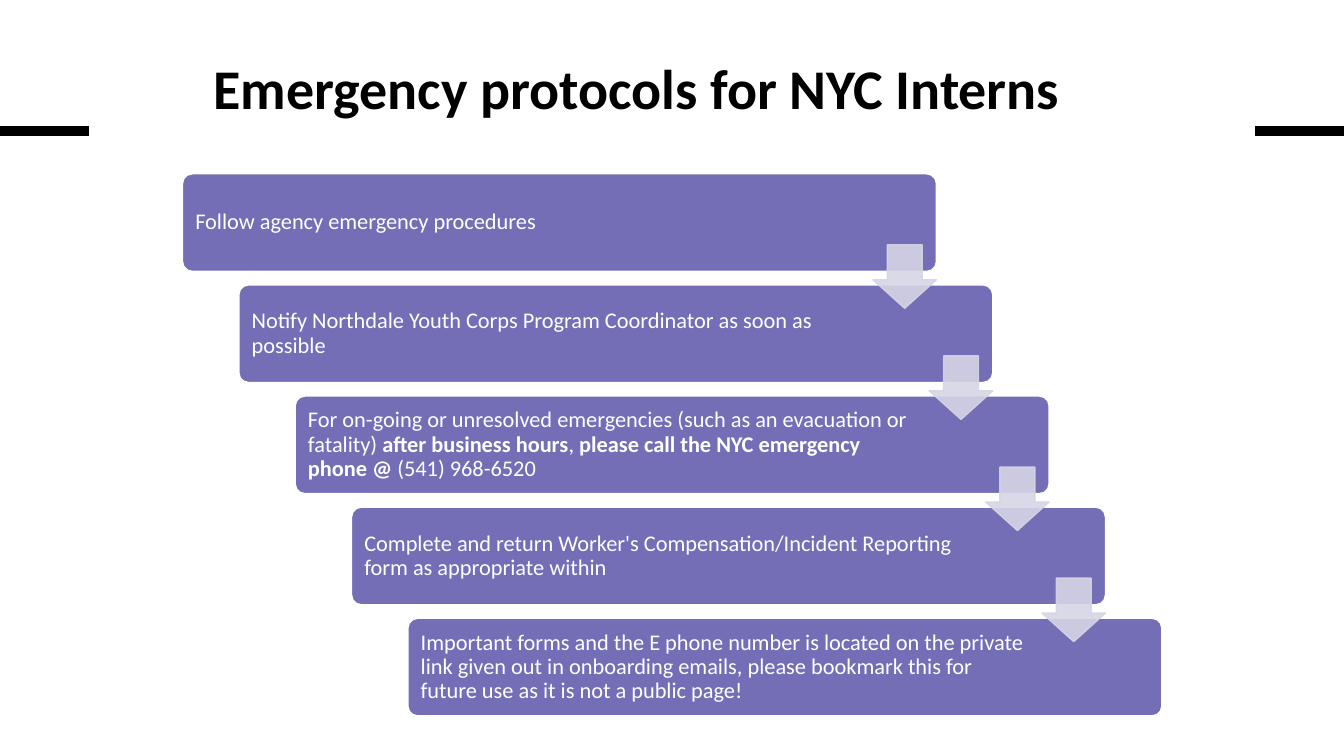
from dataclasses import dataclass

from lxml import etree
from pptx import Presentation
from pptx.dml.color import RGBColor
from pptx.enum.shapes import MSO_CONNECTOR, MSO_SHAPE
from pptx.enum.text import MSO_ANCHOR, MSO_AUTO_SIZE, PP_ALIGN
from pptx.oxml.ns import qn
from pptx.util import Cm, Pt

STRAIGHT = MSO_CONNECTOR.STRAIGHT
ROUNDED_BOX = MSO_SHAPE.ROUNDED_RECTANGLE
DOWN_ARROW = MSO_SHAPE.DOWN_ARROW
MIDDLE, TOP = MSO_ANCHOR.MIDDLE, MSO_ANCHOR.TOP
LEFT, CENTER = PP_ALIGN.LEFT, PP_ALIGN.CENTER
NO_AUTOFIT = MSO_AUTO_SIZE.NONE


@dataclass(frozen=True)
class Theme:
    font: str = "Calibri"
    title_size: float = 40
    step_size: float = 16
    black: RGBColor = RGBColor(0x00, 0x00, 0x00)
    white: RGBColor = RGBColor(0xFF, 0xFF, 0xFF)
    box: RGBColor = RGBColor(0x73, 0x6E, 0xB6)
    arrow: RGBColor = RGBColor(0xD5, 0xD5, 0xE5)
    arrow_opacity: int = 90


@dataclass(frozen=True)
class Phrase:
    text: str
    bold: bool = False


@dataclass(frozen=True)
class Step:
    phrases: tuple[Phrase, ...]


@dataclass(frozen=True)
class Rule:
    start: float
    end: float


THEME = Theme()
SLIDE_WIDTH, SLIDE_HEIGHT = 33.87, 19.05
RULE_LENGTH, RULE_TOP = 2.24, 3.3
STEP_SHIFT, STEP_DROP = 1.42, 2.8
BOX_LEFT, BOX_TOP, BOX_WIDTH, BOX_HEIGHT = 4.6, 4.38, 19.0, 2.46
ARROW_LEFT, ARROW_TOP, ARROW_SIZE = 22.0, 6.17, 1.6

RULES = (Rule(0, RULE_LENGTH), Rule(SLIDE_WIDTH - RULE_LENGTH, SLIDE_WIDTH))
STEPS = (
    Step((Phrase("Follow agency emergency procedures"),)),
    Step((Phrase("Notify Northdale Youth Corps Program Coordinator as soon as possible"),)),
    Step((
        Phrase("For on-going or unresolved emergencies (such as an evacuation or fatality) "),
        Phrase("after business hours", True),
        Phrase(", "),
        Phrase("please call the NYC emergency phone @ ", True),
        Phrase("(541) 968-6520"),
    )),
    Step((Phrase("Complete and return Worker's Compensation/Incident Reporting "
                 "form as appropriate within"),)),
    Step((Phrase("Important forms and the E phone number is located on the private link "
                 "given out in onboarding emails, please bookmark this for future use "
                 "as it is not a public page!"),)),
)


def format_run(run, size: float, color: RGBColor, bold: bool) -> None:
    run.font.name = THEME.font
    run.font.size = Pt(size)
    run.font.color.rgb = color
    run.font.bold = bold


def draw_title(slide, text: str) -> None:
    title = slide.shapes.title
    title.left, title.top = Cm(1.17), Cm(1.47)
    title.width, title.height = Cm(29.74), Cm(3.35)
    frame = title.text_frame
    frame.text = text
    frame.word_wrap = True
    frame.auto_size = NO_AUTOFIT
    frame.vertical_anchor = TOP
    paragraph = frame.paragraphs[0]
    paragraph.alignment = CENTER
    paragraph.line_spacing = 0.85
    format_run(paragraph.runs[0], THEME.title_size, THEME.black, True)


def draw_rule(slide, rule: Rule) -> None:
    connector = slide.shapes.add_connector(
        STRAIGHT, Cm(rule.start), Cm(RULE_TOP), Cm(rule.end), Cm(RULE_TOP))
    connector.line.color.rgb = THEME.black
    connector.line.width = Pt(6.75)
    etree.SubElement(connector._element.spPr, qn("a:effectLst"))


def add_filled_shape(slide, kind, left: float, top: float, width: float, height: float,
                     fill: RGBColor, outline: RGBColor):
    shape = slide.shapes.add_shape(kind, Cm(left), Cm(top), Cm(width), Cm(height))
    shape.shadow.inherit = False
    shape.fill.solid()
    shape.fill.fore_color.rgb = fill
    shape.line.color.rgb = outline
    shape.line.width = Pt(1)
    return shape


def draw_step(slide, index: int, step: Step) -> None:
    box = add_filled_shape(
        slide, ROUNDED_BOX, BOX_LEFT + index * STEP_SHIFT, BOX_TOP + index * STEP_DROP,
        BOX_WIDTH, BOX_HEIGHT, THEME.box, THEME.white)
    box.adjustments[0] = 0.1
    frame = box.text_frame
    frame.word_wrap = True
    frame.vertical_anchor = MIDDLE
    frame.margin_left, frame.margin_right = Cm(0.25), Cm(3.27)
    frame.margin_top = frame.margin_bottom = Cm(0.2)
    paragraph = frame.paragraphs[0]
    paragraph.alignment = LEFT
    paragraph.line_spacing = 0.9
    for phrase in step.phrases:
        run = paragraph.add_run()
        run.text = phrase.text
        format_run(run, THEME.step_size, THEME.white, phrase.bold)


def draw_arrow(slide, index: int) -> None:
    arrow = add_filled_shape(
        slide, DOWN_ARROW, ARROW_LEFT + index * STEP_SHIFT, ARROW_TOP + index * STEP_DROP,
        ARROW_SIZE, ARROW_SIZE, THEME.arrow, THEME.arrow)
    arrow.adjustments[0] = 0.55
    arrow.adjustments[1] = 0.45
    for color in arrow._element.spPr.iter(qn("a:srgbClr")):
        etree.SubElement(color, qn("a:alpha"), val=str(THEME.arrow_opacity * 1000))


def main() -> None:
    presentation = Presentation()
    presentation.slide_width = Cm(SLIDE_WIDTH)
    presentation.slide_height = Cm(SLIDE_HEIGHT)
    slide = presentation.slides.add_slide(presentation.slide_layouts.get_by_name("Title Only"))
    draw_title(slide, "Emergency protocols for NYC Interns")
    for rule in RULES:
        draw_rule(slide, rule)
    for index, step in enumerate(STEPS):
        draw_step(slide, index, step)
    for index in range(len(STEPS) - 1):
        draw_arrow(slide, index)
    presentation.save("out.pptx")


if __name__ == "__main__":
    main()
